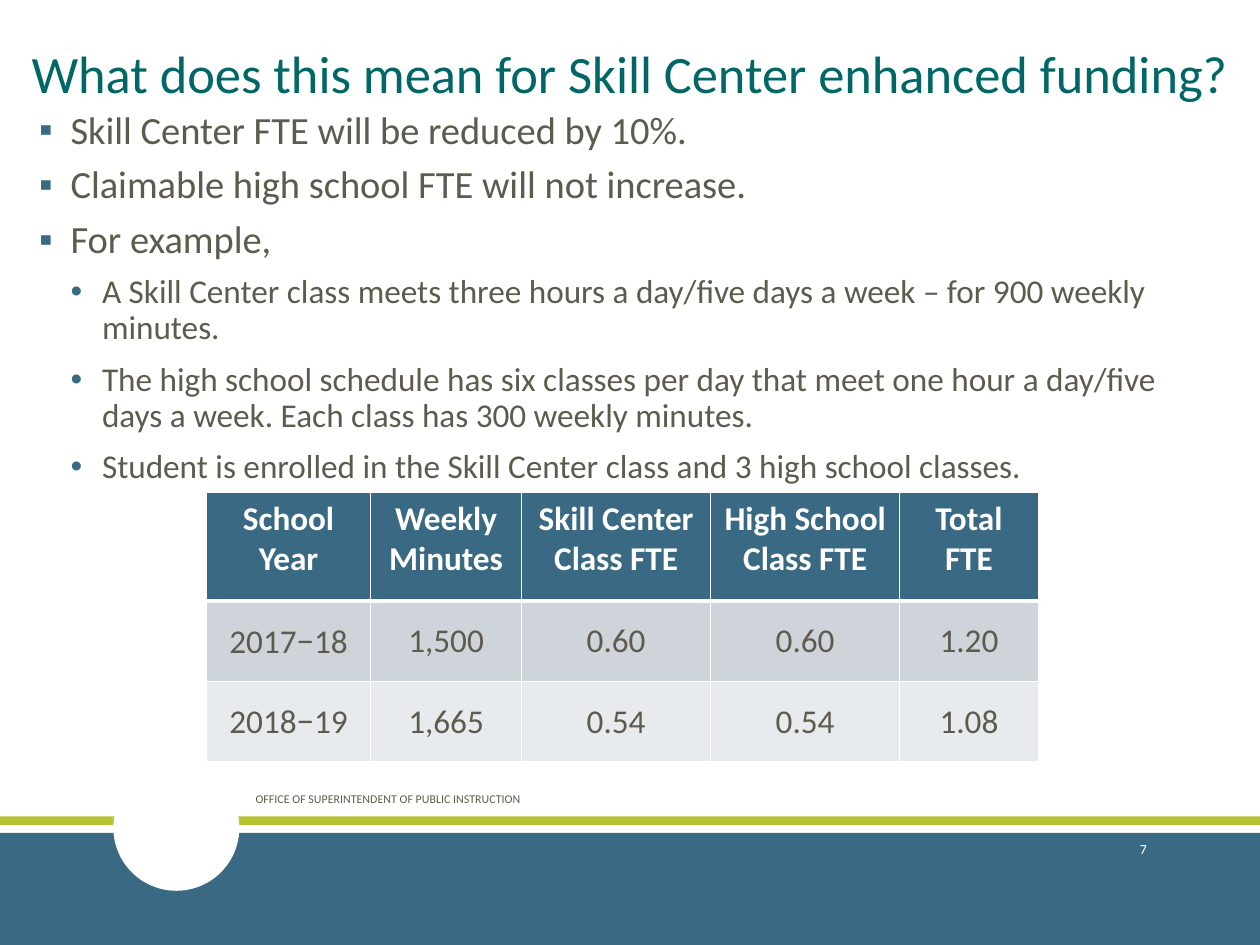
from lxml.etree import SubElement
from pptx import Presentation
from pptx.dml.color import RGBColor
from pptx.enum.shapes import MSO_SHAPE
from pptx.enum.text import MSO_ANCHOR, MSO_AUTO_SIZE, PP_ALIGN
from pptx.oxml.ns import qn
from pptx.util import Pt

SCALE = 9144
BLUE, LIME, WHITE, TEAL, GREY = "3A6983", "B7C333", "FFFFFF", "006666", "5D5B4E"
POINTS = [
    (0, "Skill Center FTE will be reduced by 10%."),
    (0, "Claimable high school FTE will not increase."),
    (0, "For example,"),
    (1, "A Skill Center class meets three hours a day/five days a week – for 900 weekly minutes."),
    (1, "The high school schedule has six classes per day that meet one hour a day/five days "
        "a week. Each class has 300 weekly minutes."),
    (1, "Student is enrolled in the Skill Center class and 3 high school classes."),
]
ROWS = [
    ["School Year", "Weekly Minutes", "Skill Center Class FTE", "High School Class FTE", "Total FTE"],
    ["2017−18", "1,500", "0.60", "0.60", "1.20"],
    ["2018−19", "1,665", "0.54", "0.54", "1.08"],
]
FILLS = [BLUE, "CED4D9", "E8EBED"]
WIDTHS = [130, 120, 150, 150, 110]
HEIGHTS = [86, 64, 64]


def px(num):
    """Turn px into EMU."""
    return num * SCALE


def color(code):
    """Turn a hex string into a colour."""
    return RGBColor.from_string(code)


def write(par, text, size=19, ink=GREY, bold=False, align=PP_ALIGN.LEFT, line=None):
    """Write text into a paragraph, with minus signs one point larger."""
    par.alignment = align
    if line:
        par.line_spacing = line
    for part in filter(None, text.partition("−")):
        run = par.add_run()
        run.text = part
        font = run.font
        font.name, font.bold = "Calibri", bold
        font.size = Pt(size + (part == "−"))
        font.color.rgb = color(ink)


def place(shape, box):
    """Move a placeholder to its box."""
    shape.left, shape.top, shape.width, shape.height = map(px, box)
    shape.text_frame.auto_size = MSO_AUTO_SIZE.NONE


def shape(slide, kind, box, fill):
    """Draw a plain filled shape."""
    item = slide.shapes.add_shape(kind, *map(px, box))
    item.shadow.inherit = False
    item.fill.solid()
    item.fill.fore_color.rgb = color(fill)
    item.line.fill.background()


def label(slide, box, text, **form):
    """Add a small text box centred in height."""
    frame = slide.shapes.add_textbox(*map(px, box)).text_frame
    frame.word_wrap = True
    frame.vertical_anchor = MSO_ANCHOR.MIDDLE
    write(frame.paragraphs[0], text, **form)


def footer(slide, box):
    """Draw the bands, the disc, the office name and the page number."""
    left, top, width, height = box
    shape(slide, MSO_SHAPE.RECTANGLE, (left, top, width, 7), LIME)
    shape(slide, MSO_SHAPE.RECTANGLE, (left, top + 13, width, height - 13), BLUE)
    shape(slide, MSO_SHAPE.OVAL, (left + 90, top - 41, 100, 100), WHITE)
    label(slide, (left + 193, top - 34, 396, 40),
          "OFFICE OF SUPERINTENDENT OF PUBLIC INSTRUCTION", size=6.8)
    label(slide, (left + 812, top + 6, 108, 40), "7", size=7.9, ink=WHITE, align=PP_ALIGN.RIGHT)


def title(slide, box):
    """Fill the title."""
    head = slide.shapes.title
    place(head, box)
    head.text_frame.vertical_anchor = MSO_ANCHOR.BOTTOM
    write(head.text_frame.paragraphs[0], "What does this mean for Skill Center enhanced funding?",
          size=30, ink=TEAL, align=PP_ALIGN.CENTER, line=0.85)


def bullet(par, mark, indent):
    """Give a paragraph a blue bullet and a hanging indent."""
    props = par._p.get_or_add_pPr()
    props.set("marL", str(px(indent)))
    props.set("indent", str(px(-25)))
    SubElement(SubElement(props, qn("a:buClr")), qn("a:srgbClr")).set("val", BLUE)
    SubElement(props, qn("a:buFont")).set("typeface", "Arial")
    SubElement(props, qn("a:buChar")).set("char", mark)


def body(slide, box):
    """Fill the bullet list."""
    item = slide.placeholders[1]
    place(item, box)
    frame = item.text_frame
    frame.margin_left = frame.margin_right = 0
    frame.vertical_anchor = MSO_ANCHOR.TOP
    for num, (level, text) in enumerate(POINTS):
        par = frame.add_paragraph() if num else frame.paragraphs[0]
        par.level = level
        bullet(par, "▪•"[level], 25 + 25 * level)
        par.space_before = Pt(6 if num else 0)
        par.space_after = Pt((1.5, 3)[level])
        write(par, text, size=(22, 19)[level], line=0.9)


def border(cell, **sides):
    """Draw white cell borders of the given widths."""
    props = cell._tc.get_or_add_tcPr()
    for num, (side, width) in enumerate(sides.items()):
        line = SubElement(props, qn("a:ln" + side), w=str(Pt(width)))
        fill = SubElement(line, qn("a:solidFill"))
        SubElement(fill, qn("a:srgbClr")).set("val", WHITE)
        props.remove(line)
        props.insert(num, line)


def table(slide, box):
    """Draw the FTE table."""
    grid = slide.shapes.add_table(len(ROWS), len(WIDTHS), *map(px, box)).table
    for col, width in zip(grid.columns, WIDTHS):
        col.width = px(width)
    for row, height in zip(grid.rows, HEIGHTS):
        row.height = px(height)
    for num, (texts, fill) in enumerate(zip(ROWS, FILLS)):
        head = num == 0
        for col, text in enumerate(texts):
            cell = grid.cell(num, col)
            cell.fill.solid()
            cell.fill.fore_color.rgb = color(fill)
            cell.vertical_anchor = MSO_ANCHOR.TOP if head else MSO_ANCHOR.MIDDLE
            border(cell, L=1, R=1, T=3 if num == 1 else 1, B=3 if head else 1)
            write(cell.text_frame.paragraphs[0], text, ink=WHITE if head else GREY,
                  bold=head, align=PP_ALIGN.CENTER)


def main():
    """Build and save the slide."""
    deck = Presentation()
    deck.slide_width, deck.slide_height = px(1000), px(750)
    slide = deck.slides.add_slide(deck.slide_layouts[1])
    footer(slide, (0, 648, 1000, 102))
    title(slide, (14, 16, 972, 72))
    body(slide, (31, 83, 934, 512))
    table(slide, (164, 391, sum(WIDTHS), sum(HEIGHTS)))
    deck.save("out.pptx")


if __name__ == "__main__":
    main()
